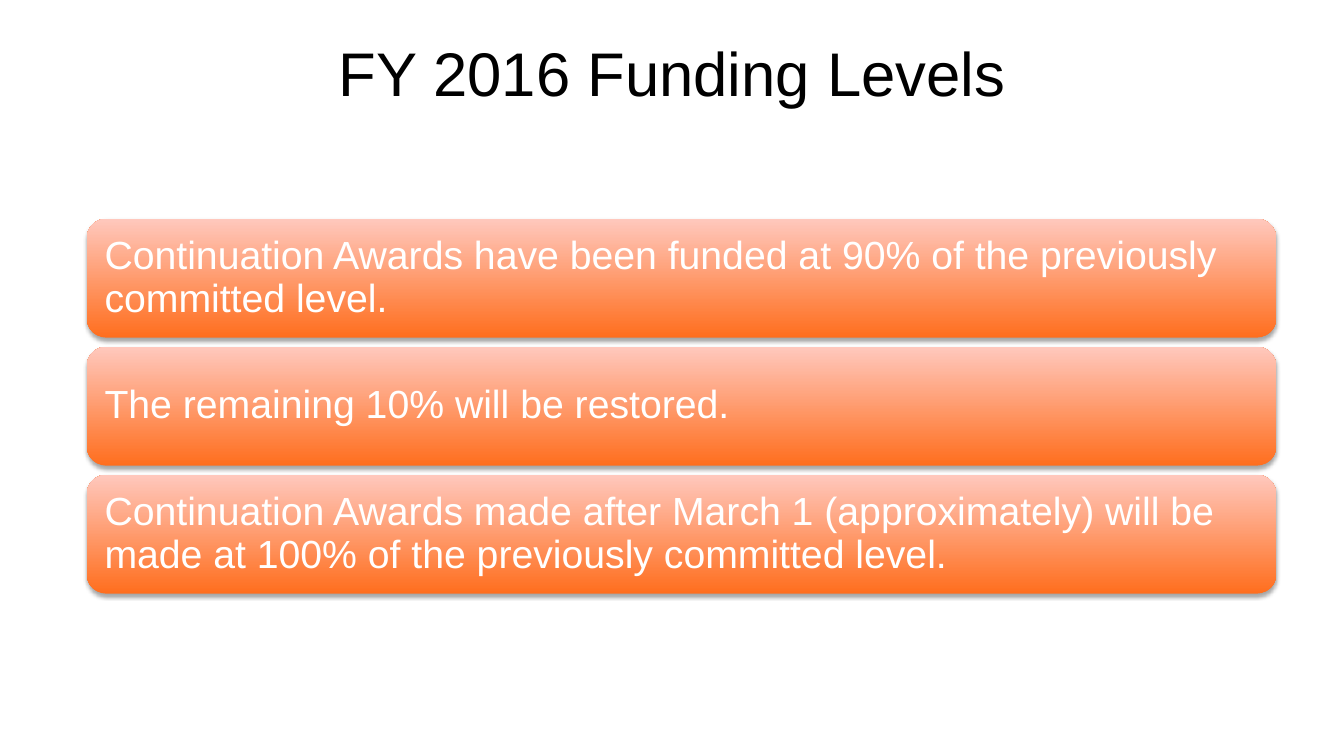
from lxml import etree
from pptx import Presentation
from pptx import util as u
from pptx.dml.color import RGBColor
from pptx.enum import shapes, text
from pptx.oxml.ns import qn

BLACK = RGBColor(0x00, 0x00, 0x00)
WHITE = RGBColor(0xFF, 0xFF, 0xFF)
ORANGE = RGBColor(0xFF, 0x6E, 0x1E)
PEACH = RGBColor(0xFF, 0xC8, 0xBD)

FUNDING_POINTS = [
    "Continuation Awards have been funded at 90% of the previously committed level.",
    "The remaining 10% will be restored.",
    "Continuation Awards made after March 1 (approximately) will be made at 100% "
    "of the previously committed level.",
]


class FundingSlide:
    """Holds the shared style and the slide being built."""

    font_name = "Arial"

    def __init__(self, deck):
        self.slide = deck.slides.add_slide(deck.slide_layouts[6])

    def set_text(self, frame, words, size, color, align):
        frame.word_wrap = True
        paragraph = frame.paragraphs[0]
        paragraph.text = words
        paragraph.alignment = align
        paragraph.font.name = self.font_name
        paragraph.font.size = u.Pt(size)
        paragraph.font.color.rgb = color
        return paragraph

    def title(self, words, left, top, width, height):
        heading = self.slide.shapes.add_textbox(
            u.Inches(left), u.Inches(top), u.Inches(width), u.Inches(height))
        self.set_text(heading.text_frame, words, 44, BLACK, text.PP_ALIGN.CENTER)

    def bar(self, words, left, top, width, height):
        bar = self.slide.shapes.add_shape(
            shapes.MSO_SHAPE.ROUNDED_RECTANGLE,
            u.Inches(left), u.Inches(top), u.Inches(width), u.Inches(height))
        bar.line.fill.background()
        bar.fill.gradient()
        bar.fill.gradient_angle = 90
        for stop, color in zip(bar.fill.gradient_stops, (ORANGE, PEACH)):
            stop.color.rgb = color
        self.drop_shadow(bar)

        frame = bar.text_frame
        frame.margin_left = frame.margin_right = u.Inches(0.12)
        frame.margin_top = frame.margin_bottom = u.Inches(0.12)
        frame.vertical_anchor = text.MSO_ANCHOR.MIDDLE
        paragraph = self.set_text(frame, words, 28, WHITE, text.PP_ALIGN.LEFT)
        paragraph.line_spacing = 0.9

    def drop_shadow(self, bar):
        bar.shadow.inherit = False
        effects = bar.element.spPr.find(qn("a:effectLst"))
        shadow = etree.SubElement(
            effects, qn("a:outerShdw"), blurRad=str(u.Pt(3.1)),
            dist=str(u.Pt(1.8)), dir="5400000", rotWithShape="0")
        tone = etree.SubElement(shadow, qn("a:srgbClr"), val=str(BLACK))
        etree.SubElement(tone, qn("a:alpha"), val="35000")


def main():
    deck = Presentation()
    deck.slide_width, deck.slide_height = u.Inches(13.33), u.Inches(7.5)
    funding = FundingSlide(deck)

    # Heading
    funding.title("FY 2016 Funding Levels", 0.67, 0.3, 12, 1.25)

    # Stacked bars, one per funding point
    for row, point in enumerate(FUNDING_POINTS):
        funding.bar(point, 0.86, 2.17 + row * 1.27, 11.8, 1.18)

    deck.save("out.pptx")


if __name__ == "__main__":
    main()
